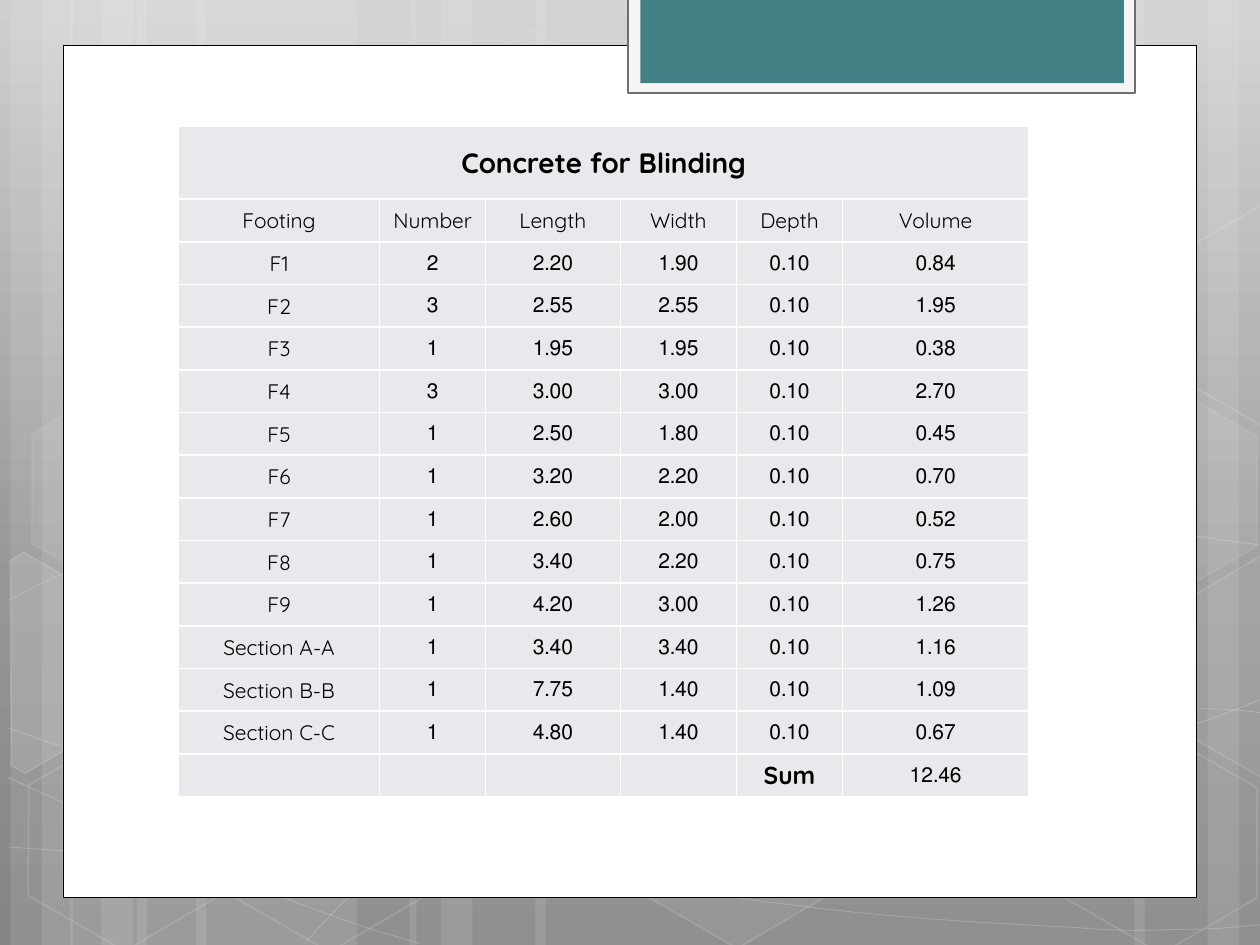
from copy import deepcopy
from math import cos, radians, sin

from lxml.etree import SubElement
from pptx import Presentation
from pptx.dml.color import RGBColor
from pptx.enum.shapes import MSO_SHAPE
from pptx.enum.text import MSO_ANCHOR, PP_ALIGN
from pptx.oxml import parse_xml
from pptx.oxml.ns import nsdecls, qn
from pptx.util import Pt

COLORS = {
    "white": "FFFFFF", "black": "000000", "teal": "438086", "frame": "F5F5F5",
    "frame line": "6F6F6F", "cell": "E9E9ED",
    "top": "CFCFCF", "middle": "969696", "bottom": "848484",
}


def format_shape(shape, fill=None, line=None, width=1, fill_alpha=100, line_alpha=100):
    """Set fill and line; alpha values are percentages of opacity."""
    shape.shadow.inherit = False
    for paint, color, alpha in ((shape.fill, fill, fill_alpha),
                                (shape.line.fill, line, line_alpha)):
        if color is None:
            paint.background()
            continue
        paint.solid()
        paint.fore_color.rgb = RGBColor.from_string(COLORS[color])
        if alpha < 100:
            solid = shape._element.spPr.find(
                qn("a:solidFill") if paint is shape.fill else "/".join((qn("a:ln"), qn("a:solidFill"))))
            SubElement(solid[0], qn("a:alpha"), val=str(alpha * 1000))
    if line:
        shape.line.width = Pt(width)


def write_text(cell, text, size=12, bold=False):
    """Write centred right-to-left text."""
    paragraph = cell.text_frame.paragraphs[0]
    paragraph.alignment = PP_ALIGN.CENTER
    paragraph._p.get_or_add_pPr().set("rtl", "1")
    run = paragraph.add_run()
    run.text = text
    run.font.name = "Quicksand"
    run.font.size = Pt(size)
    run.font.bold = bold
    run.font.color.rgb = RGBColor.from_string(COLORS["black"])


presentation = Presentation()
presentation.slide_width, presentation.slide_height = Pt(720), Pt(540)
slide = presentation.slides.add_slide(presentation.slide_layouts[6])
shapes = slide.shapes

# Background gradient, top to bottom
background = slide.background.fill
background.gradient()
background.gradient_angle = 270
stop_list = next(slide._element.iter(qn("a:gsLst")))
stop_list.append(deepcopy(stop_list[0]))
for stop, (position, name) in zip(background.gradient_stops,
                                  ((0, "top"), (0.62, "middle"), (1, "bottom"))):
    stop.position = position
    stop.color.rgb = RGBColor.from_string(COLORS[name])

# Translucent vertical stripes: left, width, rotation
STRIPES = [(78, 126, 0), (6, 36, 0), (24, 60, 0), (112, 126, 0), (40, 36, 0), (58, 60, 0),
           (528, 126, 180), (690, 36, 180), (648, 60, 180),
           (306, 222, 0), (234, 36, 0), (252, 60, 0)]
for left, width, rotation in STRIPES:
    stripe = shapes.add_shape(MSO_SHAPE.RECTANGLE, Pt(left), 0, Pt(width), Pt(540))
    stripe.rotation = rotation
    format_shape(stripe, "white", fill_alpha=10)

# Thin curves: a start point, then three Bezier points per segment
CURVES = [
    [(5, 484.5), (44, 487), (83, 489), (137, 488), (191, 487), (258, 486), (330, 479),
     (402, 472), (504, 458), (570, 444), (636, 431), (703, 409), (725, 397)],
    [(5, 343), (26, 332), (47, 321), (87, 310), (128, 300), (186, 284), (250, 279),
     (314, 274), (392, 273), (471, 279), (550, 285), (682, 307), (725, 312.5)],
    [(4, 444), (91, 484), (178, 523), (240.5, 539)],
    [(5, 416), (27, 424), (50, 432), (92, 443.5), (134, 454), (197, 472), (257, 484.5),
     (317, 497), (392, 510), (452, 517), (512, 525), (576, 528), (614, 530),
     (652, 533), (662, 531), (680, 531), (699, 531), (712, 529), (725, 528.5)],
    [(174, 539), (187, 525), (200, 510.5), (217, 497.5), (235, 484.5), (259, 470), (279, 460),
     (300, 450), (312, 446), (338, 438.5), (364, 431), (413, 421), (438, 416),
     (464, 411), (467, 411), (490, 410), (512, 407.5), (547, 405), (572, 405),
     (597, 404), (638, 405), (638, 405), (654, 405), (670, 405), (686, 405),
     (699, 405), (711, 406), (718, 407), (724, 407.5), (722, 407), (724, 407.5)],
]
for points in CURVES:
    builder = shapes.build_freeform(*points[0], scale=Pt(1))
    builder.add_line_segments(points[1:], close=False)
    curve = builder.convert_to_shape()
    # Join every three line points into one Bezier segment
    lines = list(curve._element.iter(qn("a:lnTo")))
    for first in range(0, len(lines), 3):
        bezier = SubElement(lines[first].getparent(), qn("a:cubicBezTo"))
        for line in lines[first:first + 3]:
            bezier.append(line[0])
            line.getparent().remove(line)
    format_shape(curve, line="white", width=0.5, line_alpha=20)

# Hexagons: left, top, fill opacity, line opacity
HEXAGONS = [(240.5, 26, 4, 8), (358, 424, 6, 12), (8, 425.5, 0, 12), (10, 224.5, 7, 8),
            (125, 426, 0, 12), (542, 326, 10, 12), (600.5, 427, 0, 12), (600.5, 226, 7, 8)]
for left, top, fill_alpha, line_alpha in HEXAGONS:
    hexagon = shapes.add_shape(MSO_SHAPE.HEXAGON, Pt(left), Pt(top), Pt(126), Pt(109.4))
    hexagon.adjustments[0], hexagon.adjustments[1] = 0.285, 1.155
    hexagon.rotation = 30
    format_shape(hexagon, "white" if fill_alpha else None, "white",
                 fill_alpha=fill_alpha, line_alpha=line_alpha)

# Hexagons cut by the slide edges, turned about their centres
LEFT_CUT = [(6, 320.5), (13.5, 315.5), (69, 347), (68.5, 410.5), (14.5, 442), (6, 437)]
RIGHT_CUT = [(666.5, 349), (720.5, 317.5), (726.5, 321), (726.5, 441.5), (721.5, 444), (666.5, 412.5)]
UPPER_CUT = [(x, y - 200.9) for x, y in RIGHT_CUT]
COSINE, SINE = cos(radians(30)), sin(radians(30))
for outline, center_x, center_y, fill_alpha in ((LEFT_CUT, 25.9, 385.2, 10),
                                                (RIGHT_CUT, 709.2, 374.4, 4),
                                                (UPPER_CUT, 709.2, 173.5, 0)):
    turned = [(center_x + (x - center_x) * COSINE + (y - center_y) * SINE,
               center_y - (x - center_x) * SINE + (y - center_y) * COSINE) for x, y in outline]
    builder = shapes.build_freeform(*turned[0], scale=Pt(1))
    builder.add_line_segments(turned[1:])
    cut_hexagon = builder.convert_to_shape()
    cut_hexagon.rotation = 30
    format_shape(cut_hexagon, "white" if fill_alpha else None, "white",
                 fill_alpha=fill_alpha, line_alpha=12)

# White page and the tab at the top
PANELS = [((36, 26, 648, 487), "white", "black", 0.5),
          ((359, -1.5, 289.6, 54.7), "frame", "frame line", 1.25),
          ((366, -1.5, 276.2, 49), "teal", None, 0)]
for box, fill, line, width in PANELS:
    panel = shapes.add_shape(MSO_SHAPE.RECTANGLE, *map(Pt, box))
    format_shape(panel, fill, line, width)

# Table of volumes
DEPTH = "0.10"
FOOTINGS = [
    ("F1", "2", "2.20", "1.90", "0.84"), ("F2", "3", "2.55", "2.55", "1.95"),
    ("F3", "1", "1.95", "1.95", "0.38"), ("F4", "3", "3.00", "3.00", "2.70"),
    ("F5", "1", "2.50", "1.80", "0.45"), ("F6", "1", "3.20", "2.20", "0.70"),
    ("F7", "1", "2.60", "2.00", "0.52"), ("F8", "1", "3.40", "2.20", "0.75"),
    ("F9", "1", "4.20", "3.00", "1.26"), ("Section A-A", "1", "3.40", "3.40", "1.16"),
    ("Section B-B", "1", "7.75", "1.40", "1.09"), ("Section C-C", "1", "4.80", "1.40", "0.67"),
]
rows = [("Concrete for Blinding", "", "", "", "", ""),
        ("Footing", "Number", "Length", "Width", "Depth", "Volume"),
        *[(*footing[:4], DEPTH, footing[4]) for footing in FOOTINGS],
        ("", "", "", "", "Sum", "12.46")]
STYLES = {"Concrete for Blinding": {"size": 16, "bold": True}, "Sum": {"size": 14, "bold": True}}
COLUMN_WIDTHS = [115, 60.5, 77, 66.5, 60.5, 106.5]
TITLE_HEIGHT, ROW_HEIGHT = 41.5, 24.4

table = shapes.add_table(len(rows), len(COLUMN_WIDTHS), Pt(102), Pt(72.3), Pt(486), Pt(383.1)).table
table.first_row = table.horz_banding = False
for column, width in zip(table.columns, COLUMN_WIDTHS):
    column.width = Pt(width)
for index, (row, texts) in enumerate(zip(table.rows, rows)):
    row.height = Pt(ROW_HEIGHT if index else TITLE_HEIGHT)
    for cell, text in zip(row.cells, texts):
        cell.fill.solid()
        cell.fill.fore_color.rgb = RGBColor.from_string(COLORS["cell"])
        cell.vertical_anchor = MSO_ANCHOR.MIDDLE
        cell.margin_left = cell.margin_right = cell.margin_top = Pt(0.72)
        cell.margin_bottom = 0
        for place, side in enumerate(("lnL", "lnR", "lnT", "lnB")):
            border = parse_xml(f'<a:{side} {nsdecls("a")} w="{Pt(1)}"><a:solidFill>'
                               f'<a:srgbClr val="{COLORS["white"]}"/></a:solidFill></a:{side}>')
            cell._tc.get_or_add_tcPr().insert(place, border)
        if text:
            write_text(cell, text, **STYLES.get(text, {}))
table.cell(0, 0).merge(table.cell(0, len(COLUMN_WIDTHS) - 1))

presentation.save("out.pptx")
